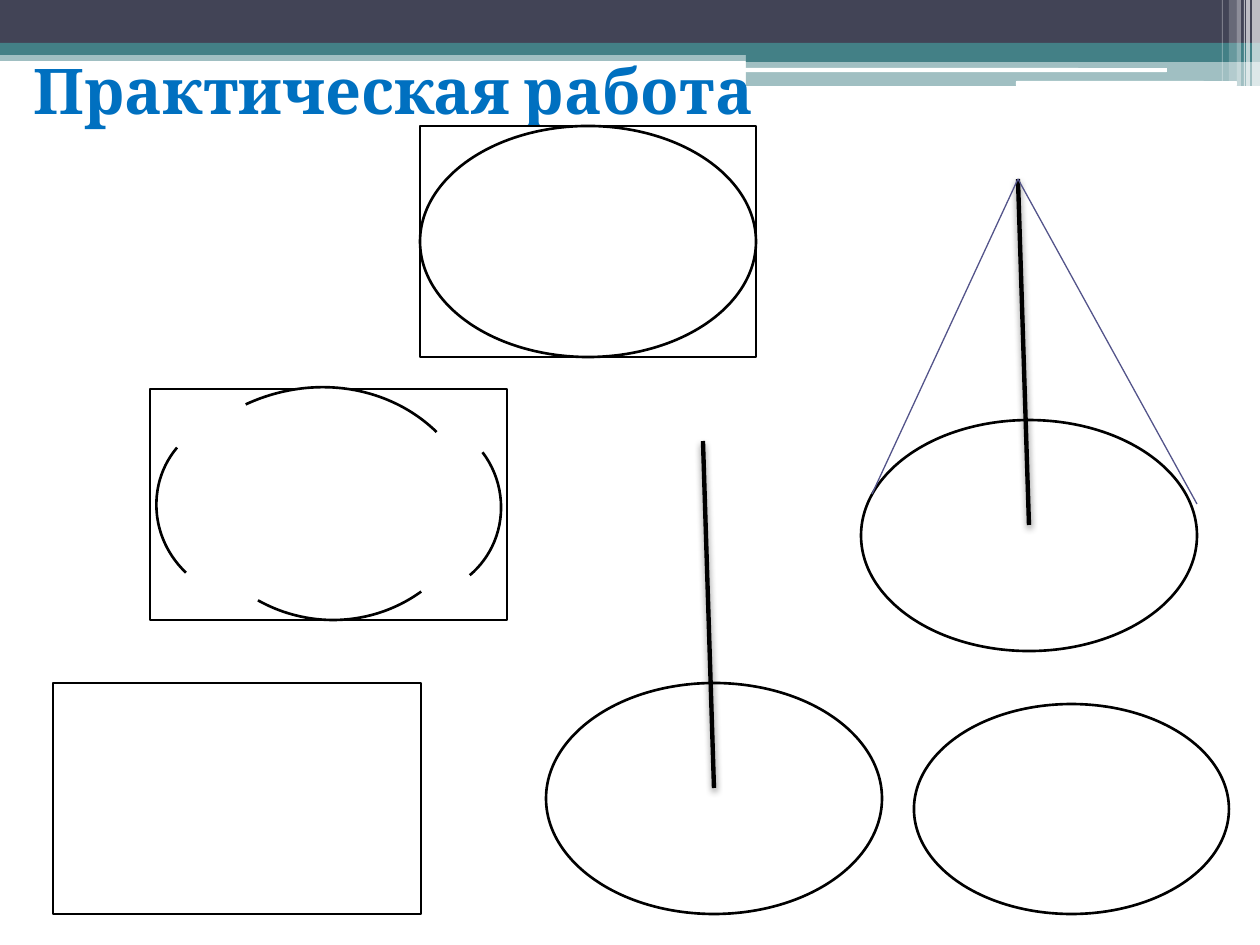
import pptx
import pptx.util
import pptx.dml.color
import pptx.enum.shapes
import pptx.enum.text
import pptx.oxml
import pptx.oxml.ns
from dataclasses import dataclass

KIND = pptx.enum.shapes.MSO_SHAPE
SCALE = 914400 / 126


@dataclass
class Theme:
    font: str = "Cambria"
    title_size: int = 36
    title: str = "0070C0"
    slate: str = "424456"
    teal: str = "438086"
    paper: str = "FFFFFF"
    ink: str = "000000"
    cone_side: str = "53548A"


theme = Theme()


def px(count):
    return pptx.util.Emu(round(count * SCALE))


def add_figure(shapes, kind, bounds, fill, line_width=0, opacity=100):
    figure = shapes.add_shape(kind, *[px(value) for value in bounds])
    figure.shadow.inherit = False
    figure.fill.solid()
    figure.fill.fore_color.rgb = pptx.dml.color.RGBColor.from_string(fill)
    if opacity < 100:
        color = figure.fill._xPr.find(".//" + pptx.oxml.ns.qn("a:srgbClr"))
        alpha = color.makeelement(pptx.oxml.ns.qn("a:alpha"), {"val": str(opacity * 1000)})
        color.append(alpha)
    if line_width:
        figure.line.color.rgb = pptx.dml.color.RGBColor.from_string(theme.ink)
        figure.line.width = pptx.util.Pt(line_width)
    else:
        figure.line.fill.background()
    return figure


deck = pptx.Presentation()
deck.slide_width, deck.slide_height = px(1260), px(945)
page = deck.slides.add_slide(deck.slide_layouts[6])

# Header bands and light strips: kind, bounds, fill, opacity
header = [
    (KIND.RECTANGLE, (0, 50, 1260, 11), theme.teal, 50),
    (KIND.RECTANGLE, (0, 0, 1260, 43), theme.slate, 100),
    (KIND.RECTANGLE, (0, 43, 1260, 12), theme.teal, 100),
    (KIND.RECTANGLE, (746, 49, 514, 13), theme.teal, 100),
    (KIND.RECTANGLE, (746, 61, 514, 25), theme.teal, 50),
    (KIND.ROUNDED_RECTANGLE, (745, 68, 422, 4), theme.paper, 100),
    (KIND.ROUNDED_RECTANGLE, (1016, 81, 221, 5), theme.paper, 100),
]
for left, width, height, opacity in [
    (1252, 8, 86, 65), (1246, 4, 86, 65), (1244, 1, 86, 60),
    (1237, 4, 86, 40), (1229, 8, 81, 20), (1222, 1, 81, 30),
]:
    header.append((KIND.RECTANGLE, (left, 0, width, height), theme.paper, opacity))
for kind, bounds, fill, opacity in header:
    add_figure(page.shapes, kind, bounds, fill, opacity=opacity)

# Title
title = page.shapes.add_textbox(px(21), px(42), px(1134), px(94))
title.text_frame.word_wrap = True
title.text_frame.vertical_anchor = pptx.enum.text.MSO_ANCHOR.MIDDLE
title.text_frame.text = "Практическая работа"
span = title.text_frame.paragraphs[0].runs[0]
span.font.name = theme.font
span.font.size = pptx.util.Pt(theme.title_size)
span.font.bold = True
span.font.color.rgb = pptx.dml.color.RGBColor.from_string(theme.title)

# Rectangle, then rectangle with its inscribed ellipse
for kind, bounds in [
    (KIND.RECTANGLE, (53, 683, 368, 231)),
    (KIND.RECTANGLE, (420, 126, 336, 231)),
    (KIND.OVAL, (420, 126, 336, 231)),
]:
    add_figure(page.shapes, kind, bounds, theme.paper, 1.5)

# Rectangle with four arcs: bounds, rotation, start and end angle
arc_group = page.shapes.add_group_shape()
add_figure(arc_group.shapes, KIND.RECTANGLE, (150, 389, 357, 231), theme.paper, 1.5)
for bounds, rotation, start, end in [
    ((155, 418, 185, 179), 223.4, 162, 214.23),
    ((321, 417, 181, 178), 52.9, 162, 214.23),
    ((136, 391, 350, 324), 327.7, 167.15, 209.04),
    ((180, 315, 302, 306), 135.3, 167.15, 206.16),
]:
    arc = add_figure(arc_group.shapes, KIND.ARC, bounds, theme.paper, 1.5)
    arc.rotation = rotation
    arc.adjustments[0], arc.adjustments[1] = start, end

# Cone bases
for left, top in [(546, 683), (861, 420)]:
    add_figure(page.shapes, KIND.OVAL, (left, top, 336, 231), theme.paper, 1.5)

# Cone axes and sides: ends, color, width, shadow
shadow_xml = (
    '<a:effectLst %s><a:outerShdw blurRad="50800" dist="25400" dir="5400000" rotWithShape="0">'
    '<a:srgbClr val="%s"><a:alpha val="45000"/></a:srgbClr></a:outerShdw></a:effectLst>'
    % (pptx.oxml.ns.nsdecls("a"), theme.ink)
)
plain_xml = "<a:effectLst %s/>" % pptx.oxml.ns.nsdecls("a")
for ends, color, width, effect in [
    ((703, 441, 714, 788), theme.ink, 2.5, shadow_xml),
    ((1018, 179, 1029, 525), theme.ink, 2.5, shadow_xml),
    ((1018, 179, 872, 494), theme.cone_side, 0.75, plain_xml),
    ((1197, 504, 1018, 179), theme.cone_side, 0.75, plain_xml),
]:
    line = page.shapes.add_connector(
        pptx.enum.shapes.MSO_CONNECTOR.STRAIGHT, *[px(value) for value in ends]
    )
    line.line.color.rgb = pptx.dml.color.RGBColor.from_string(color)
    line.line.width = pptx.util.Pt(width)
    line._element.spPr.append(pptx.oxml.parse_xml(effect))

# Separate ellipse
add_figure(page.shapes, KIND.OVAL, (914, 704, 315, 210), theme.paper, 1.5)

deck.save("out.pptx")
